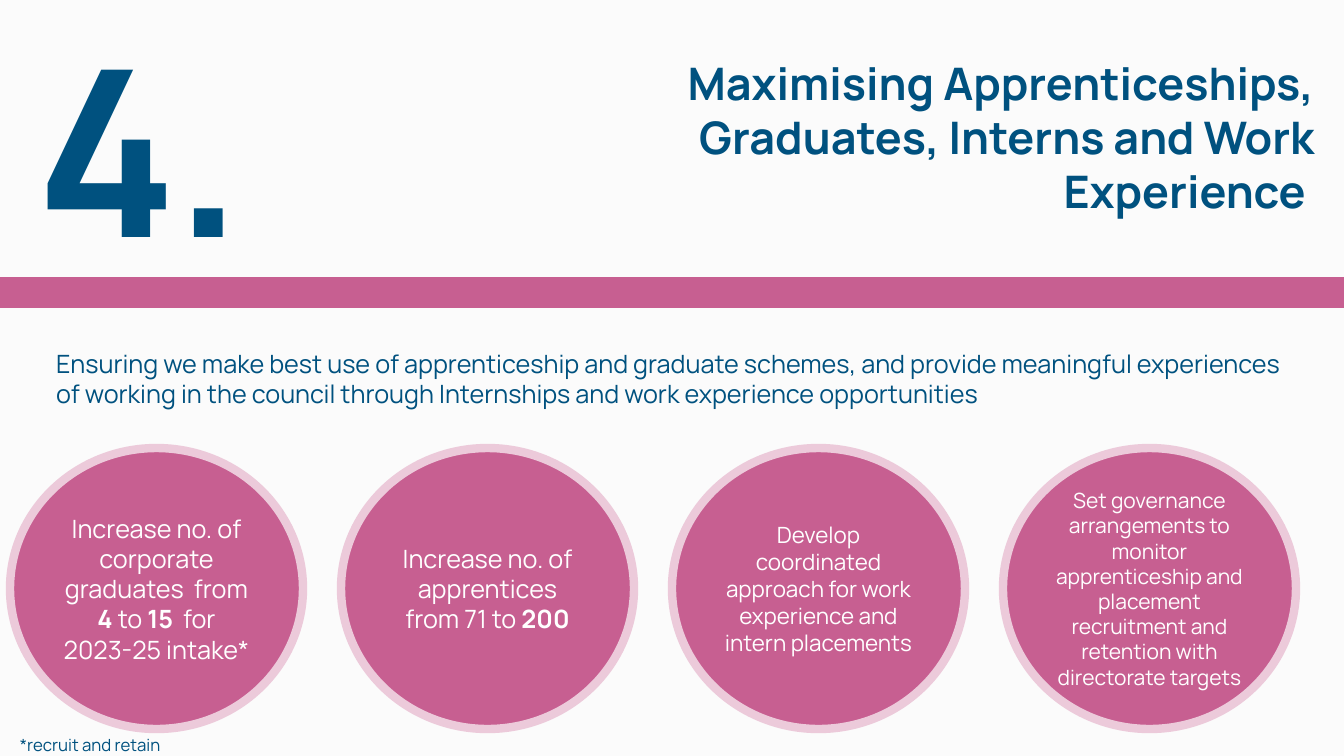
from pptx import Presentation
from pptx.dml.color import RGBColor
from pptx.enum.shapes import MSO_SHAPE
from pptx.enum.text import MSO_ANCHOR, MSO_AUTO_SIZE, PP_ALIGN
from pptx.util import Emu, Pt

COLORS = {"paper": "FBFBFB", "blue": "00517F", "pink": "C75F91", "rim": "ECCADA", "white": "FFFFFF"}
FONT = "Manrope"
PX_PER_INCH = 100.8
HEADING = "Maximising Apprenticeships, Graduates, Interns and Work Experience "
SUMMARY = ("Ensuring we make best use of apprenticeship and graduate schemes, and provide "
           "meaningful experiences of working in the council through Internships and work "
           "experience opportunities ")
# Each target: font size, then (text, bold) runs
TARGETS = [
    (18, [("Increase no. of corporate graduates  from ", False), ("4 ", True), ("to", False),
          (" 15 ", True), (" for 2023-25 intake*", False)]),
    (18, [("Increase no. of apprentices from 71 to", False), (" 200", True)]),
    (16, [("Develop coordinated approach for work experience and intern placements ", False)]),
    (15, [("Set governance arrangements to monitor apprenticeship and placement "
           "recruitment and retention with directorate targets", False)]),
]


def px(n):
    return Emu(round(n * 914400 / PX_PER_INCH))


def rgb(name):
    return RGBColor.from_string(COLORS[name])


def place(sp, box):
    for attr, n in zip(("left", "top", "width", "height"), box):
        setattr(sp, attr, px(n))


def write(sp, runs, size, color="blue", align=PP_ALIGN.LEFT, anchor=MSO_ANCHOR.TOP, indent=0):
    """Fill the shape with one unbulleted paragraph of (text, bold) runs."""
    tf = sp.text_frame
    frame_format = {"word_wrap": True, "auto_size": MSO_AUTO_SIZE.NONE, "vertical_anchor": anchor}
    for attr, value in frame_format.items():
        setattr(tf, attr, value)
    p = tf.paragraphs[0]
    for attr, value in {"alignment": align, "space_before": Pt(0), "line_spacing": 1.0}.items():
        setattr(p, attr, value)
    pPr = p._p.get_or_add_pPr()
    pPr.set("marL", str(px(indent)))
    pPr.set("indent", "0")
    pPr.insert_element_before(pPr.makeelement(
        "{http://schemas.openxmlformats.org/drawingml/2006/main}buNone", {}),
        "a:tabLst", "a:defRPr", "a:extLst")
    for text, bold in runs:
        r = p.add_run()
        r.text = text
        for attr, value in {"name": FONT, "size": Pt(size), "bold": bold}.items():
            setattr(r.font, attr, value)
        r.font.color.rgb = rgb(color)


def add_text(slide, box, text, size, bold=False, indent=0):
    sp = slide.shapes.add_textbox(*map(px, box))
    write(sp, [(text, bold)], size, indent=indent)


def add_filled(slide, kind, box, fill):
    sp = slide.shapes.add_shape(kind, *map(px, box))
    sp.shadow.inherit = False
    sp.fill.solid()
    sp.fill.fore_color.rgb = rgb(fill)
    sp.line.fill.background()
    return sp


def add_header(slide, box):
    x, y, w, h = box
    title = slide.shapes.title
    place(title, (x + 612, y + 51, 713, 174))
    write(title, [(HEADING, True)], 32, align=PP_ALIGN.RIGHT, indent=8)
    add_text(slide, (x + 19, y, 275, 291), "4.", 166, bold=True, indent=8)
    add_filled(slide, MSO_SHAPE.RECTANGLE, (x, y + h - 31, w, 31), "pink")


def add_summary(slide, box):
    body = slide.placeholders[1]
    place(body, box)
    write(body, [(SUMMARY, False)], 18)


def add_targets(slide, box):
    """Spread the target circles evenly over the box."""
    x, y, w, h = box
    diameter = 293
    pitch = (w - diameter) // (len(TARGETS) - 1)
    for i, (size, runs) in enumerate(TARGETS):
        sp = add_filled(slide, MSO_SHAPE.OVAL, (x + i * pitch, y, diameter, h), "pink")
        sp.line.color.rgb = rgb("rim")
        sp.line.width = Pt(6)
        write(sp, runs, size, "white", PP_ALIGN.CENTER, MSO_ANCHOR.MIDDLE)


def main():
    prs = Presentation()
    prs.slide_width, prs.slide_height = px(1344), px(756)
    slide = prs.slides.add_slide(prs.slide_layouts[1])
    slide.background.fill.solid()
    slide.background.fill.fore_color.rgb = rgb("paper")
    add_header(slide, (0, 0, 1344, 308))
    add_summary(slide, (46, 343, 1250, 72))
    add_targets(slide, (10, 448, 1286, 281))
    add_text(slide, (10, 730, 260, 30), "*recruit and retain", 12)
    prs.save("out.pptx")


if __name__ == "__main__":
    main()
